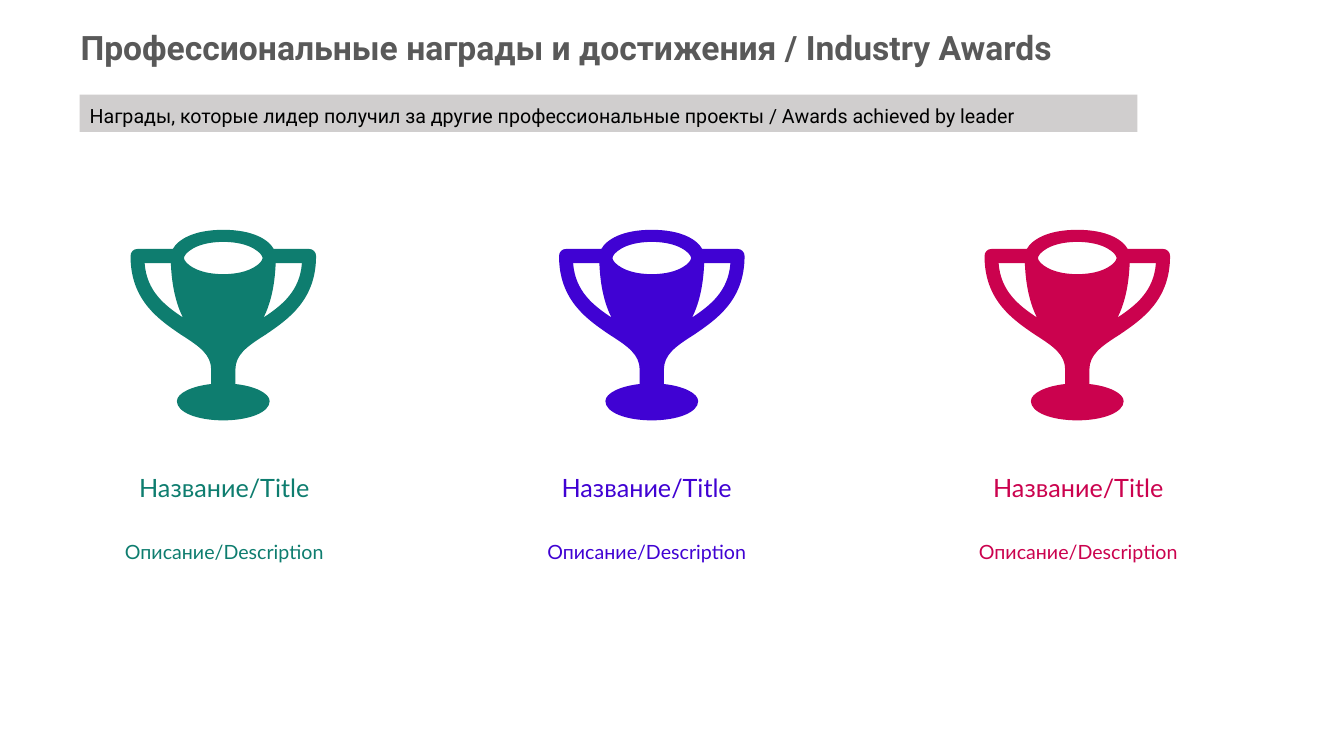
from dataclasses import dataclass

from lxml import etree
from pptx import Presentation
from pptx.dml.color import RGBColor
from pptx.enum import shapes, text
from pptx.oxml import ns
from pptx.util import Inches, Pt


@dataclass(frozen=True)
class Theme:
    heading_font: str = "Roboto"
    award_font: str = "Lato"
    heading: str = "595959"
    band: str = "D0CECE"
    band_text: str = "000000"
    heading_size: int = 24
    award_size: int = 18
    body_size: int = 14


THEME = Theme()
CUP_WIDTH = 1.85
AWARDS = [
    (1.11, 1.29, "0E7D6F"),
    (5.30, 5.54, "4002D3"),
    (9.58, 9.76, "CB024E"),
]

CUP_HALF = [
    [(0, 0)],
    [(0.30, 0), (0.45, 0.10), (0.50, 0.19)],
    [(0.85, 0.19)],
    [(0.89, 0.19), (0.92, 0.22), (0.92, 0.26)],
    [(0.92, 0.70), (0.64, 0.89), (0.42, 1.04)],
    [(0.23, 1.16), (0.12, 1.24), (0.12, 1.39)],
    [(0.12, 1.53)],
    [(0.31, 1.55), (0.46, 1.62), (0.46, 1.70)],
    [(0.46, 1.81), (0.26, 1.89), (0, 1.89)],
]
MOUTH_HALF = [
    [(0, 0.12)],
    [(0.28, 0.12), (0.39, 0.24), (0.39, 0.28)],
    [(0.39, 0.32), (0.28, 0.44), (0, 0.44)],
]
HANDLE_GAP = [
    [(0.40, 0.87)],
    [(0.46, 0.75), (0.51, 0.58), (0.52, 0.33)],
    [(0.78, 0.33)],
    [(0.76, 0.61), (0.58, 0.75), (0.40, 0.87)],
]


def mirror(segments):
    points = iter([(-x, y) for segment in reversed(segments) for x, y in reversed(segment)])
    lengths = [1] + [len(segment) for segment in reversed(segments[1:])]
    return [[next(points) for _ in range(length)] for length in lengths]


def whole(half):
    return half + mirror(half)[1:]


CUP_CONTOURS = [whole(CUP_HALF), mirror(whole(MOUTH_HALF)), HANDLE_GAP, mirror(HANDLE_GAP)]


def bend(outline, contours):
    lines = iter(list(outline.element.iter(ns.qn("a:lnTo"))))
    for contour in contours:
        for segment in contour[1:]:
            first, *others = [next(lines) for _ in segment]
            if not others:
                continue
            curve = etree.Element(ns.qn("a:cubicBezTo"))
            first.addprevious(curve)
            for line in (first, *others):
                curve.append(line[0])
                line.getparent().remove(line)


def add_cup(page, left, top, color):
    center = left + CUP_WIDTH / 2
    builder = None
    for contour in CUP_CONTOURS:
        start, *rest = [(Inches(center + x), Inches(top + y))
                        for segment in contour for x, y in segment]
        if builder is None:
            builder = page.shapes.build_freeform(*start)
        else:
            builder.move_to(*start)
        builder.add_line_segments(rest, close=True)
    trophy = builder.convert_to_shape()
    bend(trophy, CUP_CONTOURS)
    trophy.shadow.inherit = False
    trophy.fill.solid()
    trophy.fill.fore_color.rgb = RGBColor.from_string(color)
    trophy.line.fill.background()


def write(shape, words, font, size, color, insets, align=text.PP_ALIGN.LEFT,
          anchor=text.MSO_ANCHOR.TOP, spacing=None, bold=False):
    frame = shape.text_frame
    frame.word_wrap = True
    frame.vertical_anchor = anchor
    frame.margin_left = frame.margin_right = Inches(insets[0])
    frame.margin_top = frame.margin_bottom = Inches(insets[1])
    para = frame.paragraphs[0]
    para.text = words
    para.alignment = align
    para.line_spacing = spacing
    para.font.name = font
    para.font.size = Pt(size)
    para.font.bold = bold
    para.font.color.rgb = RGBColor.from_string(color)


def add_heading(page, left, top, width, height):
    box = page.shapes.add_textbox(*map(Inches, (left, top, width, height)))
    write(box, "Профессиональные награды и достижения\u00a0/ Industry Awards".replace("\u00a0", " "),
          THEME.heading_font, THEME.heading_size, THEME.heading, (0.1, 0.05),
          spacing=0.9, bold=True)


def add_band(page, left, top, width, height):
    band = page.shapes.add_shape(shapes.MSO_SHAPE.RECTANGLE,
                                 *map(Inches, (left, top, width, height)))
    band.shadow.inherit = False
    band.fill.solid()
    band.fill.fore_color.rgb = RGBColor.from_string(THEME.band)
    band.line.fill.background()
    write(band, "Награды, которые лидер получил за другие профессиональные проекты"
          " / Awards achieved by leader",
          THEME.heading_font, THEME.body_size, THEME.band_text, (0.1, 0.05), spacing=1.2)


def add_award(page, left, top, width, cup_left, color):
    add_cup(page, cup_left, top, color)
    for words, size, offset, height, inset in (
        ("Название/Title", THEME.award_size, 2.41, 0.3, 0),
        ("Описание/Description", THEME.body_size, 2.55, 1.29, 0.02),
    ):
        box = page.shapes.add_textbox(*map(Inches, (left, top + offset, width, height)))
        write(box, words, THEME.award_font, size, color, (0.05, inset),
              align=text.PP_ALIGN.CENTER, anchor=text.MSO_ANCHOR.MIDDLE)


def main():
    deck = Presentation()
    deck.slide_width, deck.slide_height = Inches(13.33), Inches(7.5)
    page = deck.slides.add_slide(deck.slide_layouts[6])
    for left, cup_left, color in AWARDS:
        add_award(page, left, 2.28, 2.23, cup_left, color)
    add_band(page, 0.79, 0.94, 10.49, 0.37)
    add_heading(page, 0.7, 0.26, 10.55, 0.71)
    deck.save("out.pptx")


if __name__ == "__main__":
    main()
